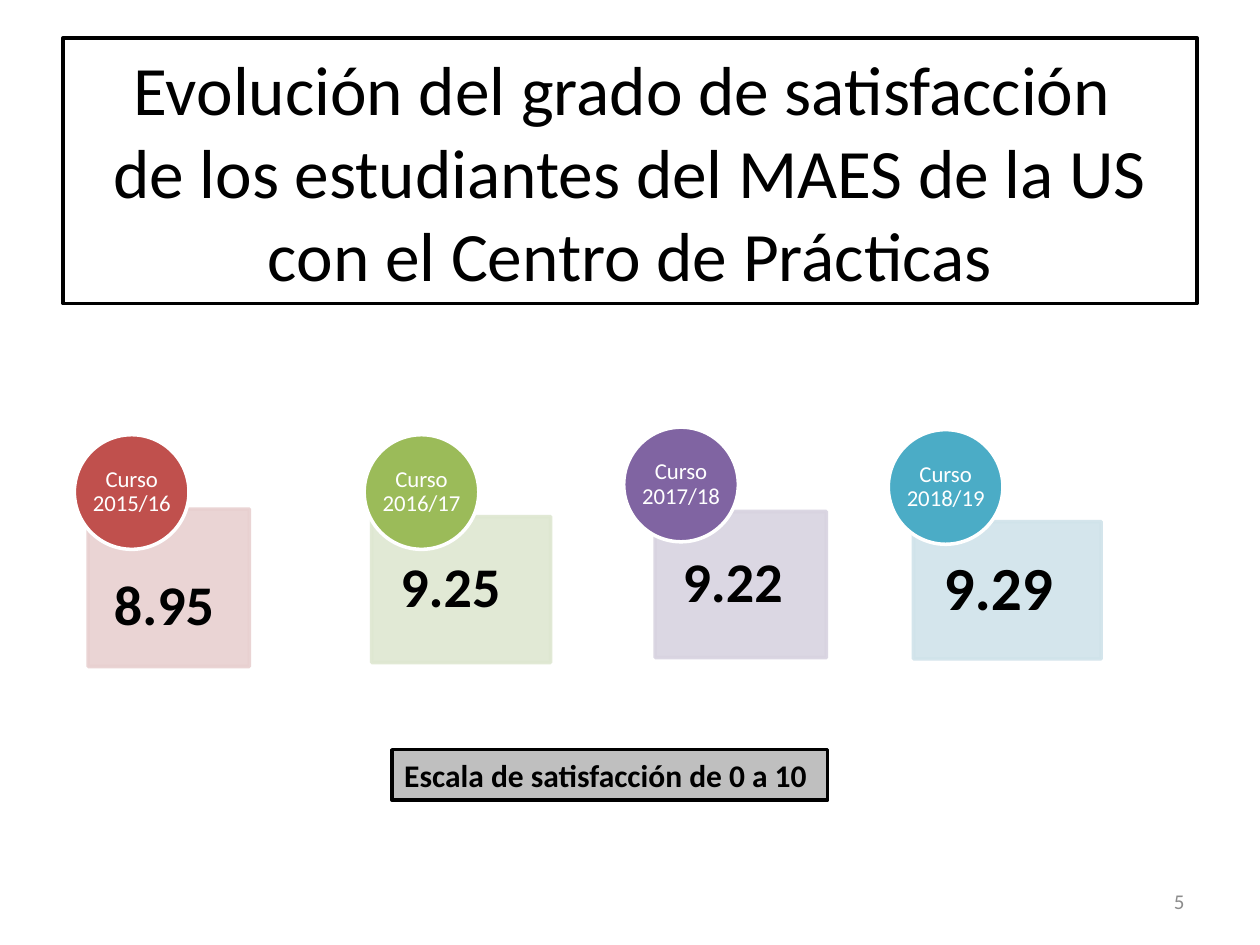
from lxml import etree
from pptx import Presentation
from pptx.dml.color import RGBColor
from pptx.enum import shapes, text
from pptx.oxml.ns import qn
from pptx.util import Inches, Pt

COLORS = {
    "black": "000000", "white": "FFFFFF", "scale": "BFBFBF", "number": "8C8C8C",
    "red": "C0504D", "red_tint": "E8D0D0",
    "green": "9BBB59", "green_tint": "DEE7D1",
    "purple": "8064A2", "purple_tint": "D8D3E0",
    "blue": "4BACC6", "blue_tint": "D0E3EA",
}


class SlideBuilder:
    """Holds the slide and its shared style."""

    font = "Calibri"
    line_width = 2
    opacity = 90
    circle_size = 0.91

    def __init__(self, slide):
        self.slide = slide

    def color(self, name):
        return RGBColor.from_string(COLORS[name])

    def set_text(self, shape, content, size, color="black", bold=False, align="LEFT",
                 margins=(0.1, 0.05, 0.1, 0.05), spacing=None):
        frame = shape.text_frame
        frame.word_wrap = True
        frame.vertical_anchor = text.MSO_ANCHOR.MIDDLE
        (frame.margin_left, frame.margin_top,
         frame.margin_right, frame.margin_bottom) = map(Inches, margins)
        paragraph = frame.paragraphs[0]
        paragraph.text = content
        paragraph.alignment = getattr(text.PP_ALIGN, align)
        paragraph.line_spacing = spacing
        paragraph.font.name = self.font
        paragraph.font.size = Pt(size)
        paragraph.font.bold = bold
        paragraph.font.color.rgb = self.color(color)

    def box(self, place, fill, line, kind=shapes.MSO_SHAPE.RECTANGLE,
            translucent=False):
        shape = self.slide.shapes.add_shape(kind, *map(Inches, place))
        shape.shadow.inherit = False
        shape.fill.solid()
        shape.fill.fore_color.rgb = self.color(fill)
        shape.line.color.rgb = self.color(line)
        shape.line.width = Pt(self.line_width)
        if translucent:
            for tint in shape._element.spPr.iter(qn("a:srgbClr")):
                etree.SubElement(tint, qn("a:alpha"), val=str(self.opacity * 1000))
        return shape

    def label(self, place, content, size, **style):
        self.set_text(self.slide.shapes.add_textbox(*map(Inches, place)),
                      content, size, **style)

    def course(self, year, score, hue, card, circle, size=32, drop=0):
        """A tinted card with the score, and a circle with the year on its corner."""
        score_card = self.box(card, hue + "_tint", hue + "_tint", translucent=True)
        self.set_text(score_card, score, size, bold=True, spacing=0.9,
                      margins=(0.16 * card[2], drop, 0.1, 0))
        year_circle = self.box((*circle, self.circle_size, self.circle_size),
                               hue, "white", shapes.MSO_SHAPE.OVAL)
        self.set_text(year_circle, f"Curso {year}", 13, color="white", align="CENTER",
                      margins=(0, 0, 0, 0), spacing=0.9)


def main():
    deck = Presentation()
    deck.slide_width, deck.slide_height = Inches(10), Inches(7.5)
    builder = SlideBuilder(deck.slides.add_slide(deck.slide_layouts[6]))

    # Title
    title = builder.box((0.5, 0.3, 9, 2.11), "white", "black")
    builder.set_text(title, "Evolución del grado de satisfacción \v"
                     "de los estudiantes del MAES de la US\v"
                     "con el Centro de Prácticas", 39.6, align="CENTER")

    # Slide number
    builder.label((7.17, 6.95, 2.33, 0.4), "5", 12, color="number", align="RIGHT")

    # Score of each course
    builder.course("2015/16", "8.95", "red", (0.7, 4.04, 1.28, 1.25), (0.59, 3.45),
                   drop=0.31)
    builder.course("2016/17", "9.25", "green", (2.95, 4.1, 1.42, 1.16), (2.89, 3.45))
    builder.course("2017/18", "9.22", "purple", (5.2, 4.06, 1.36, 1.16), (4.95, 3.39))
    builder.course("2018/19", "9.29", "blue", (7.25, 4.14, 1.49, 1.09), (7.05, 3.41),
                   size=35)

    # Scale
    scale = builder.box((3.11, 5.95, 3.46, 0.4), "scale", "black")
    builder.set_text(scale, "Escala de satisfacción de 0 a 10", 18, bold=True)

    deck.save("out.pptx")


if __name__ == "__main__":
    main()
